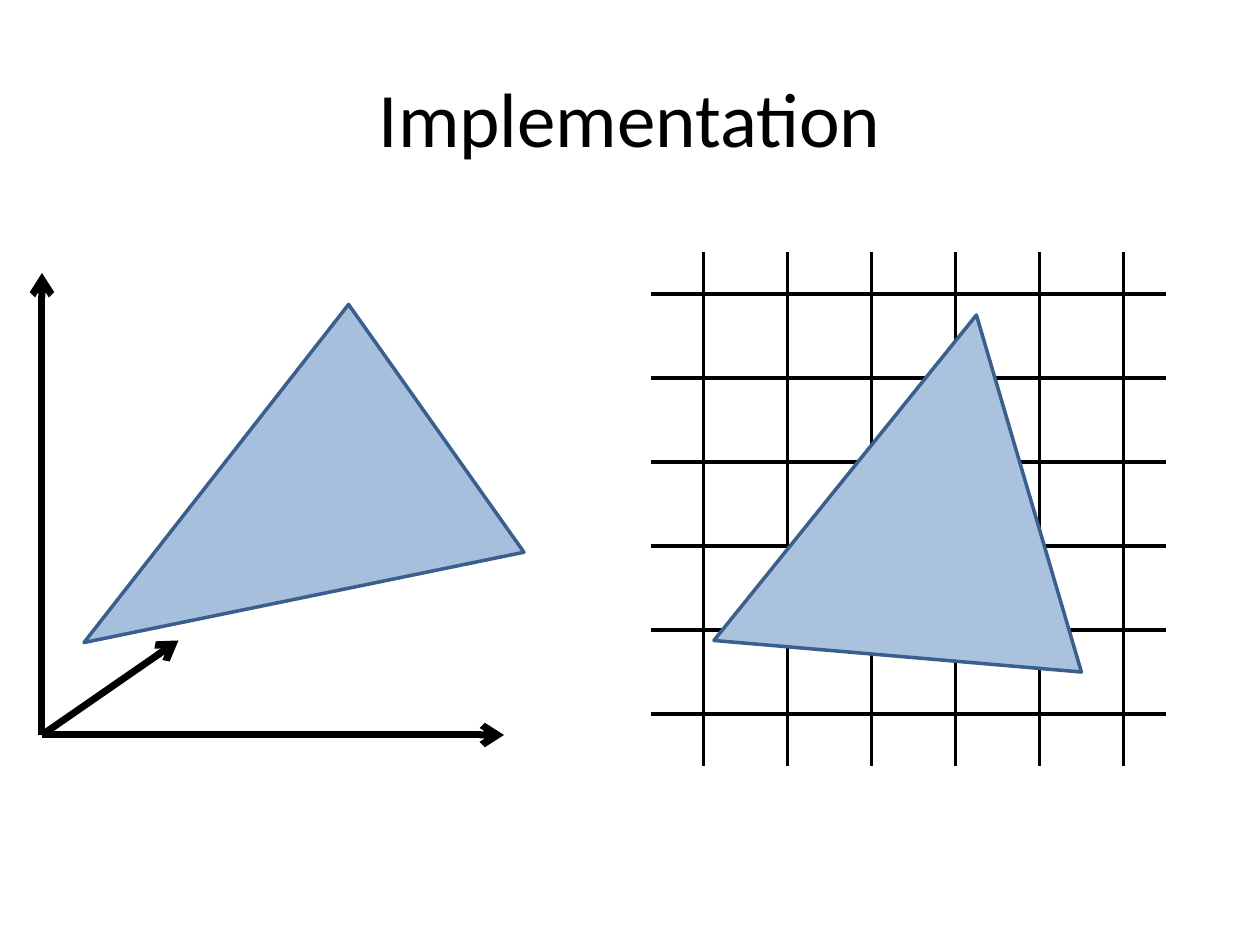
from lxml.etree import SubElement as Sub
from pptx import Presentation
from pptx.dml.color import RGBColor
from pptx.enum.shapes import MSO_CONNECTOR as Link
from pptx.enum.text import MSO_ANCHOR as Anchor, PP_ALIGN as Align
from pptx.oxml.ns import qn
from pptx.util import Inches, Pt

COLS, ROWS = 120, 90
UNIT = Inches(10) // COLS
INK, EDGE = "000000", "3A5F8C"


def tint(code):
    """Return the colour for a hex string."""
    return RGBColor.from_string(code)


def spot(box, x, y):
    """Turn grid steps within a box into slide lengths."""
    return round((box[0] + x) * UNIT), round((box[1] + y) * UNIT)


def stroke(shapes, box, start, end, width, arrow=False):
    """Draw a straight line, with an arrowhead at its end if asked."""
    line = shapes.add_connector(Link.STRAIGHT, *spot(box, *start), *spot(box, *end))
    line.line.color.rgb = tint(INK)
    line.line.width = Pt(width)
    if arrow:
        Sub(line.line._get_or_add_ln(), qn("a:tailEnd"), type="arrow")
    Sub(line._element.spPr, qn("a:effectLst"))


def draw_tri(shapes, box, points, fill, alpha=None):
    """Draw a filled triangle through three grid points of a box."""
    first, *rest = [spot(box, *point) for point in points]
    pen = shapes.build_freeform(*first)
    pen.add_line_segments(rest, close=True)
    tri = pen.convert_to_shape()
    tri.shadow.inherit = False
    tri.fill.solid()
    tri.fill.fore_color.rgb = tint(fill)
    if alpha:
        color = tri._element.spPr.find(f"{qn('a:solidFill')}/{qn('a:srgbClr')}")
        Sub(color, qn("a:alpha"), val=str(alpha * 1000))
    tri.line.color.rgb = tint(EDGE)
    tri.line.width = Pt(2)


def draw_title(slide, box, text):
    """Place the title placeholder and write its text."""
    title = slide.shapes.title
    title.left, title.top = spot(box, 0, 0)
    title.width, title.height = (round(size * UNIT) for size in box[2:])
    frame = title.text_frame
    frame.word_wrap = True
    frame.vertical_anchor = Anchor.MIDDLE
    para = frame.paragraphs[0]
    para.alignment = Align.CENTER
    run = para.add_run()
    run.text = text
    run.font.name, run.font.size = "Calibri", Pt(44)
    run.font.color.rgb = tint(INK)


def draw_space(slide, box):
    """Draw the three axes and the triangle in space."""
    wide, high = box[2:]
    for tip in ((0, 0), (wide, high), (13, high - 9)):
        stroke(slide.shapes, box, (0, high), tip, 4, arrow=True)
    points = (29.2, 3), (4, 35.2), (45.9, 26.6)
    draw_tri(slide.shapes, box, points, "4F81BD", alpha=50)


def draw_raster(slide, box):
    """Draw the pixel grid and the projected triangle."""
    wide, high = box[2:]
    count, step = 6, 8
    mesh = slide.shapes.add_group_shape().shapes
    for i in range(count):
        y = 4 + i * step
        stroke(mesh, box, (0, y), (wide, y), 2)
    for i in reversed(range(count)):
        x = 5 + i * step
        stroke(mesh, box, (x, 0), (x, high), 2)
    draw_tri(slide.shapes, box, ((31, 6), (41, 40), (6, 37)), "AAC2DE")


def main():
    """Build the slide and save it."""
    deck = Presentation()
    deck.slide_width, deck.slide_height = COLS * UNIT, ROWS * UNIT
    slide = deck.slides.add_slide(deck.slide_layouts[5])
    draw_title(slide, (6, 3.6, 108, 15), "Implementation")
    draw_space(slide, (4, 26, 44, 44))
    draw_raster(slide, (62, 24, 49, 49))
    deck.save("out.pptx")


if __name__ == "__main__":
    main()
